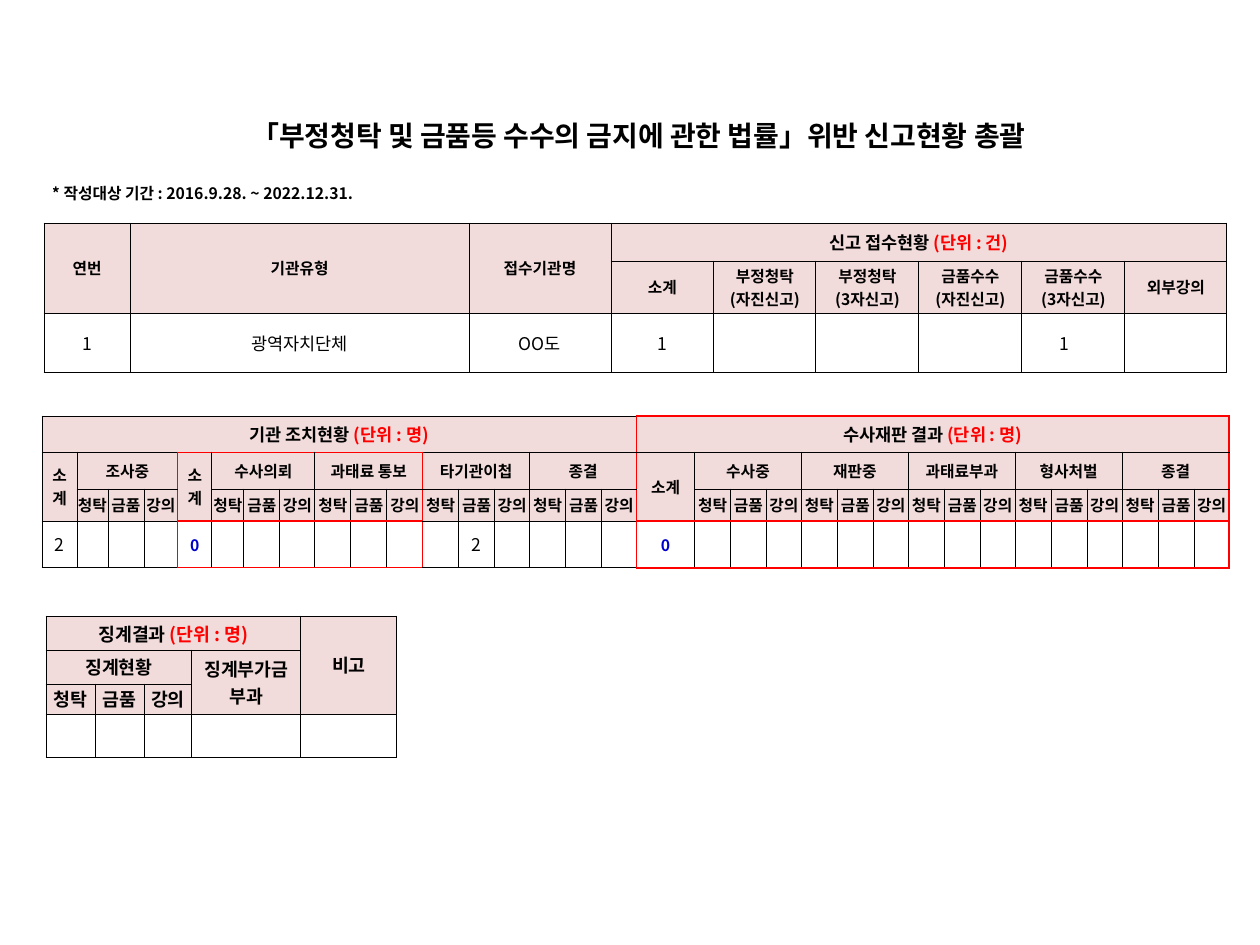
from lxml.etree import SubElement
from pptx import Presentation
from pptx.dml.color import RGBColor
from pptx.enum.text import MSO_ANCHOR, PP_ALIGN
from pptx.oxml.ns import qn
from pptx.util import Emu, Pt

PX_PER_INCH = 126
FONT = "Noto Sans CJK KR"
COLORS = {"text": "000000", "unit": "FF0000", "accent": "FF0000",
          "zero": "0000CC", "header": "F2DCDB", "line": "000000"}
SIDES = {"left": "a:lnL", "right": "a:lnR", "top": "a:lnT", "bottom": "a:lnB"}
KINDS = ["청탁", "금품", "강의"]


def px(length):
    """Turn pixels into EMU."""
    return Emu(round(length * 914400 / PX_PER_INCH))


def add_run(paragraph, text, size, bold, color):
    """Add one formatted run."""
    run = paragraph.add_run()
    run.text = text
    run.font.size = Pt(size)
    run.font.bold = bold
    run.font.color.rgb = RGBColor.from_string(COLORS[color])
    run.font.name = FONT
    SubElement(run.font._element, qn("a:ea"), typeface=FONT)


def write(cell, text, unit="", size=9, bold=True, color="text", align=PP_ALIGN.CENTER):
    """Write text in a cell; "|" starts a paragraph, a newline breaks the line."""
    frame = cell.text_frame
    for index, part in enumerate(text.split("|")):
        paragraph = frame.add_paragraph() if index else frame.paragraphs[0]
        paragraph.alignment = align
        for number, line in enumerate(part.split("\n")):
            if number:
                paragraph.add_line_break()
            add_run(paragraph, line, size, bold, color)
    if unit:
        add_run(paragraph, unit, size, bold, "unit")


def paint_side(cell, side, color, width):
    """Set the line on one side of a cell."""
    properties = cell._tc.get_or_add_tcPr()
    line = properties.find(qn(SIDES[side]))
    if line is None:
        line = SubElement(properties, qn(SIDES[side]))
    for child in list(line):
        line.remove(child)
    line.set("w", str(Pt(width)))
    fill = SubElement(line, qn("a:solidFill"))
    SubElement(fill, qn("a:srgbClr"), val=COLORS[color])


def add_grid(slide, left, top, columns, rows, header_rows=0, lined=True):
    """Add a table with plain cells and a tinted header."""
    frame = slide.shapes.add_table(len(rows), len(columns), px(left), px(top),
                                   px(sum(columns)), px(sum(rows)))
    table = frame.table
    table.first_row = table.horz_banding = False
    for column, width in zip(table.columns, columns):
        column.width = px(width)
    for index, (row, height) in enumerate(zip(table.rows, rows)):
        row.height = px(height)
        for cell in row.cells:
            cell.margin_left = cell.margin_right = 0
            cell.margin_top = cell.margin_bottom = 0
            cell.vertical_anchor = MSO_ANCHOR.MIDDLE
            if lined:
                for side in SIDES:
                    paint_side(cell, side, "line", 0.5)
            if index < header_rows:
                cell.fill.solid()
                cell.fill.fore_color.rgb = RGBColor.from_string(COLORS["header"])
            else:
                cell.fill.background()
    return table


def fill_grid(table, entries):
    """Merge and write cells given as row, column, row span, column span, text, format."""
    for row, column, height, width, text, style in entries:
        cell = table.cell(row, column)
        if height * width > 1:
            cell.merge(table.cell(row + height - 1, column + width - 1))
        write(cell, text, **style)
    for cell in table.iter_cells():
        if not cell.text and not cell.is_spanned:
            SubElement(cell.text_frame.paragraphs[0]._p, qn("a:endParaRPr"), sz="900")


def outline(table, first, last, color, width):
    """Draw a frame round a block of cells, on both sides of each edge."""
    (top, left), (bottom, right) = first, last
    edges = []
    for column in range(left, right + 1):
        edges += [(top, column, "top"), (top - 1, column, "bottom"),
                  (bottom, column, "bottom"), (bottom + 1, column, "top")]
    for row in range(top, bottom + 1):
        edges += [(row, left, "left"), (row, left - 1, "right"),
                  (row, right, "right"), (row, right + 1, "left")]
    for row, column, side in edges:
        if 0 <= row < len(table.rows) and 0 <= column < len(table.columns):
            paint_side(table.cell(row, column), side, color, width)
            if side == "right":
                paint_merged_right(table, row, column, color, width)
            if side == "bottom" and row and table.cell(row, column).is_spanned:
                paint_side(table.cell(row - 1, column), side, color, width)


def paint_merged_right(table, row, column, color, width):
    """Repeat a right edge on the origin of the merged cell that ends there."""
    for start in range(column, -1, -1):
        cell = table.cell(row, start)
        if cell.is_merge_origin and start + cell.span_width - 1 == column:
            paint_side(cell, "right", color, width)
            return


def place_title(slide, left, top):
    """Place the title and the period."""
    table = add_grid(slide, left, top, [1173], [82, 35], lined=False)
    write(table.cell(0, 0), "「부정청탁 및 금품등 수수의 금지에 관한 법률」위반 신고현황 총괄", size=16)
    write(table.cell(1, 0), "* 작성대상 기간 : 2016.9.28. ~ 2022.12.31.", align=PP_ALIGN.LEFT)


def place_reports(slide, left, top):
    """Place the table of reports received."""
    table = add_grid(slide, left, top, [86, 339, 142, 103, 102, 103, 103, 103, 102],
                     [38, 52, 59], header_rows=2)
    plain = {"size": 10, "bold": False}
    entries = [(0, column, 2, 1, text, {})
               for column, text in enumerate(["연번", "기관유형", "접수기관명"])]
    entries.append((0, 3, 1, 6, "신고 접수현황 ", {"unit": "(단위 : 건)", "size": 10}))
    heads = ["소계", "부정청탁\n(자진신고)", "부정청탁\n(3자신고)",
             "금품수수\n(자진신고)", "금품수수\n(3자신고)", "외부강의"]
    entries += [(1, column, 1, 1, text, {}) for column, text in enumerate(heads, 3)]
    values = {0: "1", 1: "광역자치단체", 2: "OO도", 3: "1", 7: "1　"}
    entries += [(2, column, 1, 1, text, plain) for column, text in values.items()]
    fill_grid(table, entries)


def place_actions(slide, left, top):
    """Place the table of agency actions and court results."""
    group = [36, 36, 35]
    columns = [35, 31, 36, 34, 34, 32, 36, 35, 36, 36, 36] + group * 2 + [58] + group * 5
    table = add_grid(slide, left, top, columns, [36, 37, 32, 47], header_rows=3)
    unit = {"unit": "(단위 : 명)", "size": 10}
    entries = [(0, 0, 1, 17, "기관 조치현황 ", unit), (0, 17, 1, 16, "수사재판 결과 ", unit)]
    entries += [(1, column, 2, 1, text, {})
                for column, text in [(0, "소|계"), (4, "소|계"), (17, "소계")]]
    groups = {1: "조사중", 5: "수사의뢰", 8: "과태료 통보", 11: "타기관이첩", 14: "종결",
              18: "수사중", 21: "재판중", 24: "과태료부과", 27: "형사처벌", 30: "종결"}
    for start, text in groups.items():
        entries.append((1, start, 1, 3, text, {}))
        entries += [(2, column, 1, 1, kind, {}) for column, kind in enumerate(KINDS, start)]
    entries += [(3, column, 1, 1, "2", {"size": 10, "bold": False}) for column in (0, 12)]
    entries += [(3, column, 1, 1, "0", {"color": "zero"}) for column in (4, 17)]
    fill_grid(table, entries)
    outline(table, (1, 4), (3, 10), "accent", 0.5)
    outline(table, (0, 17), (3, 32), "accent", 1)
    for start, end in [(4, 10), (17, 32)]:
        for column in range(start, end + 1):
            paint_side(table.cell(3, column), "top", "accent", 1)
            paint_side(table.cell(2, column), "bottom", "accent", 1)
    for column in (4, 17):
        paint_side(table.cell(1, column), "bottom", "accent", 1)


def place_discipline(slide, left, top):
    """Place the table of disciplinary results."""
    table = add_grid(slide, left, top, [49, 49, 48, 109, 96], [34, 34, 30, 44], header_rows=3)
    style = {"size": 10.5}
    entries = [(0, 0, 1, 4, "징계결과 ", {"unit": "(단위 : 명)", **style}),
               (0, 4, 3, 1, "비고", style), (1, 0, 1, 3, "징계현황", style),
               (1, 3, 2, 1, "징계부가금\n부과", style)]
    entries += [(2, column, 1, 1, kind, style) for column, kind in enumerate(KINDS)]
    fill_grid(table, entries)


def main():
    """Build the slide and save it."""
    presentation = Presentation()
    presentation.slide_width, presentation.slide_height = px(1260), px(945)
    slide = presentation.slides.add_slide(presentation.slide_layouts[6])
    place_title(slide, 52, 93)
    place_reports(slide, 44, 223)
    place_actions(slide, 42, 416)
    place_discipline(slide, 46, 616)
    presentation.save("out.pptx")


if __name__ == "__main__":
    main()
